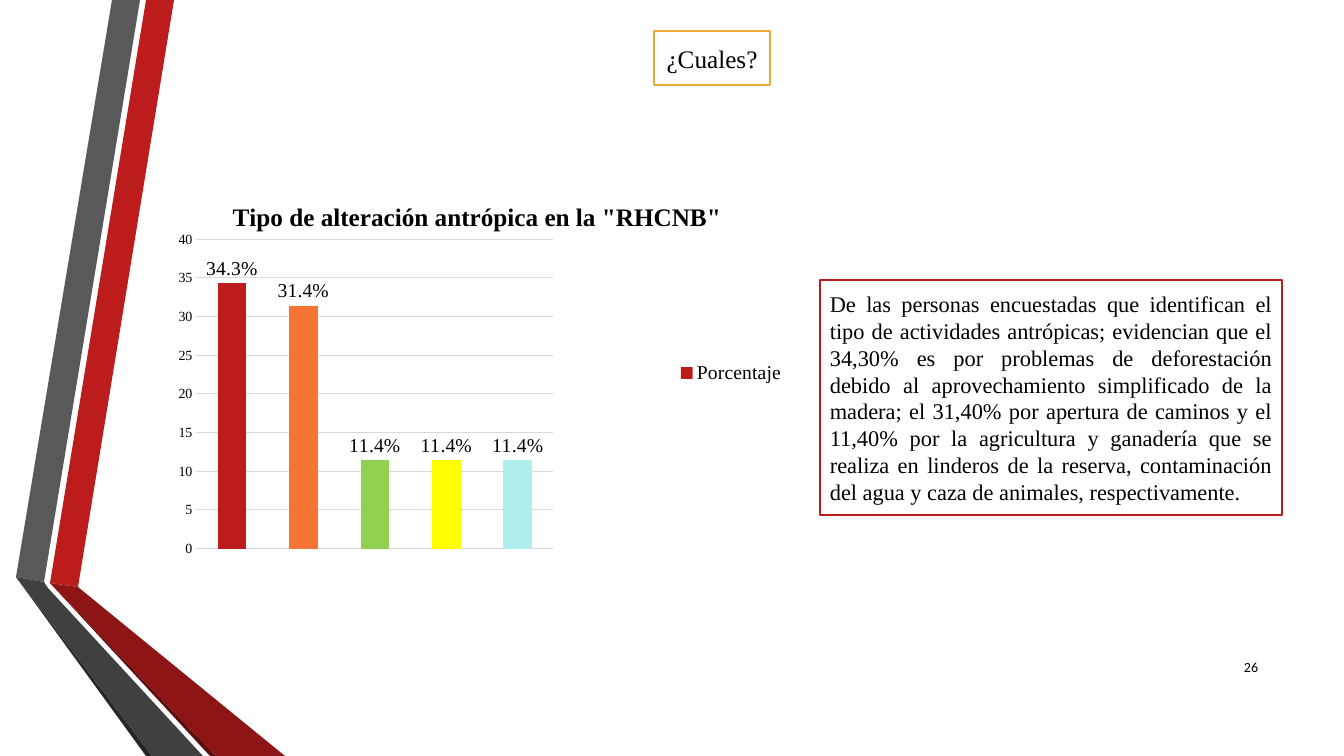
from dataclasses import dataclass
from typing import Any, Optional

from lxml.etree import SubElement
from pptx import Presentation
from pptx.chart.chart import Chart
from pptx.chart.data import CategoryChartData
from pptx.dml.color import RGBColor
from pptx.enum.chart import XL_CHART_TYPE, XL_LABEL_POSITION, XL_LEGEND_POSITION, XL_TICK_MARK
from pptx.enum.text import MSO_ANCHOR, PP_ALIGN
from pptx.oxml.ns import qn
from pptx.slide import Slide
from pptx.util import Emu, Pt

EMU_PER_PX = 914400 / 100.8

BLACK = RGBColor(0x00, 0x00, 0x00)
WHITE = RGBColor(0xFF, 0xFF, 0xFF)
RED = RGBColor(0xBC, 0x1C, 0x1C)
DEEP_RED = RGBColor(0x8D, 0x15, 0x15)
DARKEST_RED = RGBColor(0x5E, 0x0E, 0x0E)
GREY = RGBColor(0x59, 0x59, 0x59)
DEEP_GREY = RGBColor(0x40, 0x40, 0x40)
DARKEST_GREY = RGBColor(0x26, 0x26, 0x26)
GOLD = RGBColor(0xEA, 0xAC, 0x35)
ORANGE = RGBColor(0xF6, 0x75, 0x34)
GREEN = RGBColor(0x92, 0xD0, 0x50)
YELLOW = RGBColor(0xFF, 0xFF, 0x00)
PALE_BLUE = RGBColor(0xB0, 0xEE, 0xEE)
GRID_GREY = RGBColor(0xD9, 0xD9, 0xD9)

SERIF = "Times New Roman"
SANS = "Calibri"


@dataclass(frozen=True)
class Ribbon:
    color: RGBColor
    corners: tuple[tuple[int, int], ...]


@dataclass(frozen=True)
class Panel:
    text: str
    box: tuple[int, int, int, int]
    size: int
    align: PP_ALIGN
    font_name: str = SERIF
    border: Optional[RGBColor] = None


@dataclass(frozen=True)
class Alteration:
    category: str
    percentage: float
    color: RGBColor


RIBBONS = (
    Ribbon(RED, ((50, 583), (78, 587), (174, 0), (146, 0))),
    Ribbon(GREY, ((140, 0), (112, 0), (16, 577), (44, 582))),
    Ribbon(DARKEST_GREY, ((16, 577), (146, 756), (152, 756))),
    Ribbon(DARKEST_RED, ((50, 583), (210, 756), (216, 756))),
    Ribbon(DEEP_RED, ((50, 583), (216, 756), (285, 756), (78, 587))),
    Ribbon(DEEP_GREY, ((203, 756), (48, 588), (44, 582), (16, 577), (152, 756))),
)

PANELS = (
    Panel("26", (1208, 647, 60, 40), 10, PP_ALIGN.RIGHT, SANS),
    Panel("¿Cuales?", (654, 31, 116, 54), 18, PP_ALIGN.CENTER, border=GOLD),
    Panel(
        "De las personas encuestadas que identifican el tipo de actividades antrópicas; "
        "evidencian que el 34,30% es por problemas de deforestación debido al "
        "aprovechamiento simplificado de la madera; el 31,40% por apertura de caminos y "
        "el 11,40% por la agricultura y ganadería que se realiza en linderos de la "
        "reserva, contaminación del agua y caza de animales, respectivamente.",
        (820, 280, 462, 235), 16, PP_ALIGN.JUSTIFY, border=RED,
    ),
)

ALTERATIONS = (
    Alteration("1", 34.3, RED),
    Alteration("2", 31.4, ORANGE),
    Alteration("3", 11.4, GREEN),
    Alteration("4", 11.4, YELLOW),
    Alteration("5", 11.4, PALE_BLUE),
)

CHART_BOX = (158, 182, 638, 382)
TITLE_LAYOUT = {"xMode": "edge", "yMode": "edge", "x": 0.11, "y": 0.04}
PLOT_LAYOUT = {
    "layoutTarget": "inner", "xMode": "edge", "yMode": "edge",
    "x": 0.06, "y": 0.15, "w": 0.56, "h": 0.81,
}


def px(length: int) -> Emu:
    return Emu(round(length * EMU_PER_PX))


def apply(target: Any, values: dict[str, Any]) -> None:
    for attribute, value in values.items():
        setattr(target, attribute, value)


def style_font(font: Any, size: int, name: str = SERIF, bold: bool = False) -> None:
    apply(font, {"size": Pt(size), "name": name, "bold": bold})
    font.color.rgb = BLACK


def paint(target: Any, color: RGBColor) -> None:
    target.fill.solid()
    target.fill.fore_color.rgb = color


def draw_ribbon(slide: Slide, ribbon: Ribbon) -> None:
    start, *rest = ribbon.corners
    builder = slide.shapes.build_freeform(*start, scale=EMU_PER_PX)
    builder.add_line_segments(rest, close=True)
    band = builder.convert_to_shape()
    paint(band, ribbon.color)
    band.line.fill.background()
    band.shadow.inherit = False


def draw_panel(slide: Slide, panel: Panel) -> None:
    box = [px(length) for length in panel.box]
    if panel.border is None:
        holder = slide.shapes.add_textbox(*box)
    else:
        holder = slide.shapes.add_shape(1, *box)
        paint(holder, WHITE)
        holder.line.color.rgb = panel.border
        holder.line.width = Pt(1.25)
        holder.shadow.inherit = False
    frame = holder.text_frame
    apply(frame, {"word_wrap": True, "vertical_anchor": MSO_ANCHOR.MIDDLE})
    paragraph = frame.paragraphs[0]
    paragraph.alignment = panel.align
    run = paragraph.add_run()
    run.text = panel.text
    style_font(run.font, panel.size, panel.font_name)


def set_layout(parent: Any, values: dict[str, Any]) -> None:
    layout = parent.get_or_add_layout() if hasattr(parent, "get_or_add_layout") else parent.find(qn("c:layout"))
    if layout is None:
        layout = SubElement(parent, qn("c:layout"))
        parent.insert(0, layout)
    manual = SubElement(layout, qn("c:manualLayout"))
    for tag, value in values.items():
        SubElement(manual, qn(f"c:{tag}")).set("val", str(value))


def style_title(chart: Chart) -> None:
    chart.has_title = True
    title = chart.chart_title
    paragraph = title.text_frame.paragraphs[0]
    run = paragraph.add_run()
    run.text = 'Tipo de alteración antrópica en la "RHCNB"'
    style_font(run.font, 18, bold=True)
    set_layout(title._element, TITLE_LAYOUT)


def style_axes(chart: Chart) -> None:
    chart.category_axis.visible = False
    scale = chart.value_axis
    apply(scale, {
        "minimum_scale": 0, "maximum_scale": 40, "major_unit": 5,
        "major_tick_mark": XL_TICK_MARK.NONE, "minor_tick_mark": XL_TICK_MARK.NONE,
        "has_major_gridlines": True,
    })
    style_font(scale.tick_labels.font, 10)
    scale.format.line.fill.background()
    gridline = scale.major_gridlines.format.line
    gridline.color.rgb = GRID_GREY
    gridline.width = Pt(0.75)


def draw_chart(slide: Slide) -> None:
    data = CategoryChartData()
    data.categories = [item.category for item in ALTERATIONS]
    data.add_series("Porcentaje", [item.percentage for item in ALTERATIONS])
    box = [px(length) for length in CHART_BOX]
    chart = slide.shapes.add_chart(XL_CHART_TYPE.COLUMN_CLUSTERED, *box, data).chart
    style_font(chart.font, 10, SANS)
    style_title(chart)
    style_axes(chart)
    set_layout(chart._chartSpace.chart.plotArea, PLOT_LAYOUT)

    plot = chart.plots[0]
    apply(plot, {"gap_width": 150, "vary_by_categories": False, "has_data_labels": True})
    apply(plot.data_labels, {
        "show_value": True, "number_format": '0.0"%"', "number_format_is_linked": False,
        "position": XL_LABEL_POSITION.OUTSIDE_END,
    })
    style_font(plot.data_labels.font, 14)
    percentages = plot.series[0]
    paint(percentages.format, RED)
    for index, item in enumerate(ALTERATIONS):
        paint(percentages.points[index].format, item.color)

    chart.has_legend = True
    apply(chart.legend, {"position": XL_LEGEND_POSITION.RIGHT, "include_in_layout": False})
    style_font(chart.legend.font, 14)


def main() -> None:
    presentation = Presentation()
    apply(presentation, {"slide_width": px(1344), "slide_height": px(756)})
    slide = presentation.slides.add_slide(presentation.slide_layouts[6])
    for ribbon in RIBBONS:
        draw_ribbon(slide, ribbon)
    for panel in PANELS:
        draw_panel(slide, panel)
    draw_chart(slide)
    presentation.save("out.pptx")


if __name__ == "__main__":
    main()
